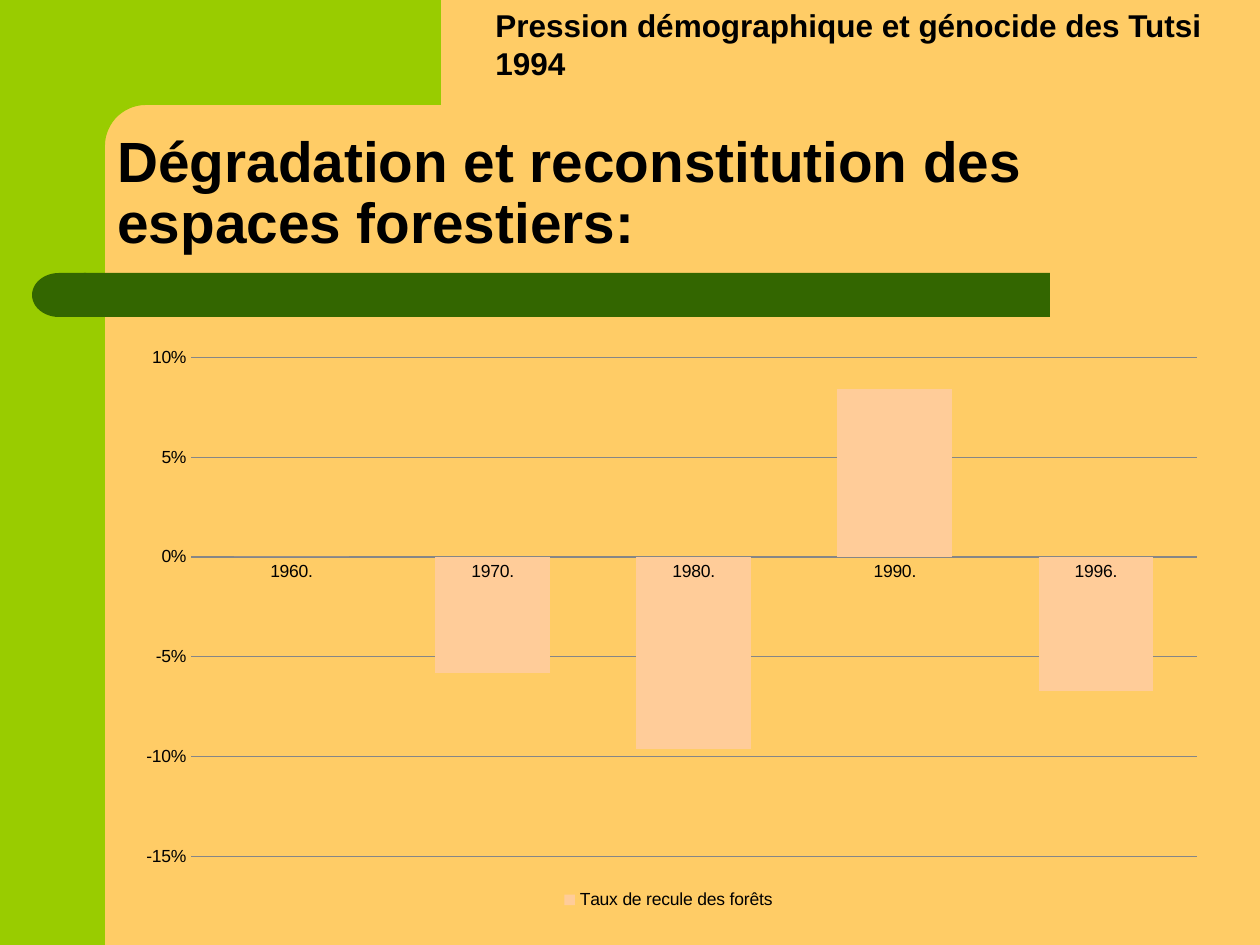
"""Build the slide on forest degradation and regrowth."""
import math
from dataclasses import dataclass

import lxml.etree
import pptx
import pptx.chart.data
import pptx.dml.color
import pptx.enum.chart
import pptx.enum.shapes
import pptx.enum.text
import pptx.oxml
import pptx.oxml.ns
import pptx.util

PX = 914400 // 126
FONT = "Arial"
SAND = pptx.dml.color.RGBColor(0xFF, 0xCC, 0x66)
LIME = pptx.dml.color.RGBColor(0x99, 0xCC, 0x00)
FOREST = pptx.dml.color.RGBColor(0x33, 0x66, 0x00)
PEACH = pptx.dml.color.RGBColor(0xFF, 0xCC, 0x99)
GRAY = pptx.dml.color.RGBColor(0x86, 0x86, 0x86)
BLACK = pptx.dml.color.RGBColor(0, 0, 0)
Shape = pptx.enum.shapes.MSO_SHAPE
Anchor = pptx.enum.text.MSO_ANCHOR


@dataclass(frozen=True)
class Area:
    left: int
    top: int
    width: int
    height: int

    def emu(self) -> tuple[int, ...]:
        return tuple(n * PX for n in (self.left, self.top, self.width, self.height))


@dataclass(frozen=True)
class Block:
    area: Area
    kind: Shape
    color: pptx.dml.color.RGBColor
    rotation: int = 0


@dataclass(frozen=True)
class Heading:
    area: Area
    text: str
    size: float
    anchor: Anchor
    spacing: float


SIDEBAR = Block(Area(0, 0, 105, 945), Shape.RECTANGLE, LIME)
RULE = Block(Area(84, 273, 966, 44), Shape.RECTANGLE, FOREST)
RULE_CAP = Block(Area(32, 273, 54, 44), Shape.FLOWCHART_DELAY, FOREST, 180)
HEADINGS = (
    Heading(Area(105, 105, 1092, 157),
            "Dégradation et reconstitution des espaces forestiers:", 32.4, Anchor.BOTTOM, 0.9),
    Heading(Area(483, 0, 777, 127),
            "Pression démographique et génocide des Tutsi 1994", 18, Anchor.TOP, 1.0),
)
CHART_AREA = Area(116, 325, 1105, 590)
PLOT = {"x": 0.068, "y": 0.055, "w": 0.91, "h": 0.846}
FOREST_RATES = {"1960.": 0, "1970.": -0.058, "1980.": -0.096, "1990.": 0.084, "1996.": -0.067}


def paint(shape, color: pptx.dml.color.RGBColor) -> None:
    shape.shadow.inherit = False
    shape.fill.solid()
    shape.fill.fore_color.rgb = color
    shape.line.fill.background()


def draw_block(page, block: Block) -> None:
    shape = page.shapes.add_shape(block.kind, *block.area.emu())
    shape.rotation = block.rotation
    paint(shape, block.color)


def draw_corner(page) -> None:
    radius, center = 41, 146
    angles = [math.radians(degrees) for degrees in range(0, 91, 6)]
    arc = [(center - radius * math.sin(a), center - radius * math.cos(a)) for a in angles]
    points = [(441, 0), (441, 105), *arc, (105, 161), (63, 161), (63, 0)]
    start, *rest = [(round(x * PX), round(y * PX)) for x, y in points]
    builder = page.shapes.build_freeform(*start)
    builder.add_line_segments(rest, close=True)
    paint(builder.convert_to_shape(), LIME)


def draw_heading(page, heading: Heading) -> None:
    frame = page.shapes.add_textbox(*heading.area.emu()).text_frame
    frame.word_wrap = True
    frame.vertical_anchor = heading.anchor
    para = frame.paragraphs[0]
    para.text = heading.text
    para.line_spacing = heading.spacing
    para.font.name = FONT
    para.font.size = pptx.util.Pt(heading.size)
    para.font.bold = True
    para.font.color.rgb = BLACK


def place_plot(chart) -> None:
    plot_area = chart.plots[0]._element.getparent()
    for old in plot_area.findall(pptx.oxml.ns.qn("c:layout")):
        plot_area.remove(old)
    layout = lxml.etree.Element(pptx.oxml.ns.qn("c:layout"))
    manual = lxml.etree.SubElement(layout, pptx.oxml.ns.qn("c:manualLayout"))
    modes = {"layoutTarget": "inner", "xMode": "edge", "yMode": "edge"}
    for tag, value in {**modes, **PLOT}.items():
        lxml.etree.SubElement(manual, pptx.oxml.ns.qn(f"c:{tag}"), val=str(value))
    plot_area.insert(0, layout)


def style_line(line) -> None:
    line.color.rgb = GRAY
    line.width = pptx.util.Pt(0.75)


def draw_chart(page) -> None:
    data = pptx.chart.data.CategoryChartData(number_format="0%")
    data.categories = list(FOREST_RATES)
    data.add_series("Taux de recule des forêts", list(FOREST_RATES.values()))
    kind = pptx.enum.chart.XL_CHART_TYPE.COLUMN_CLUSTERED
    chart = page.shapes.add_chart(kind, *CHART_AREA.emu(), data).chart
    chart.has_title = False
    chart.font.name = FONT
    chart.font.size = pptx.util.Pt(10)
    chart.font.color.rgb = BLACK
    chart.has_legend = True
    chart.legend.position = pptx.enum.chart.XL_LEGEND_POSITION.BOTTOM
    chart.legend.include_in_layout = False

    plot = chart.plots[0]
    plot.vary_by_categories = False
    plot.gap_width = 75
    plot.overlap = -25
    series = plot.series[0]
    series.invert_if_negative = False
    series.format.fill.solid()
    series.format.fill.fore_color.rgb = PEACH

    for axis in (chart.category_axis, chart.value_axis):
        axis.major_tick_mark = pptx.enum.chart.XL_TICK_MARK.NONE
        axis.minor_tick_mark = pptx.enum.chart.XL_TICK_MARK.NONE
    style_line(chart.category_axis.format.line)
    values = chart.value_axis
    values.minimum_scale, values.maximum_scale, values.major_unit = -0.15, 0.1, 0.05
    values.tick_labels.number_format = "0%"
    values.tick_labels.number_format_is_linked = False
    values.format.line.fill.background()
    values.has_major_gridlines = True
    style_line(values.major_gridlines.format.line)
    place_plot(chart)


def main() -> None:
    deck = pptx.Presentation()
    deck.slide_width, deck.slide_height = pptx.util.Inches(10), pptx.util.Inches(7.5)
    page = deck.slides.add_slide(deck.slide_layouts[6])
    page.background.fill.solid()
    page.background.fill.fore_color.rgb = SAND
    draw_block(page, SIDEBAR)
    draw_corner(page)
    for block in (RULE, RULE_CAP):
        draw_block(page, block)
    draw_chart(page)
    for heading in HEADINGS:
        draw_heading(page, heading)
    deck.save("out.pptx")


if __name__ == "__main__":
    main()
